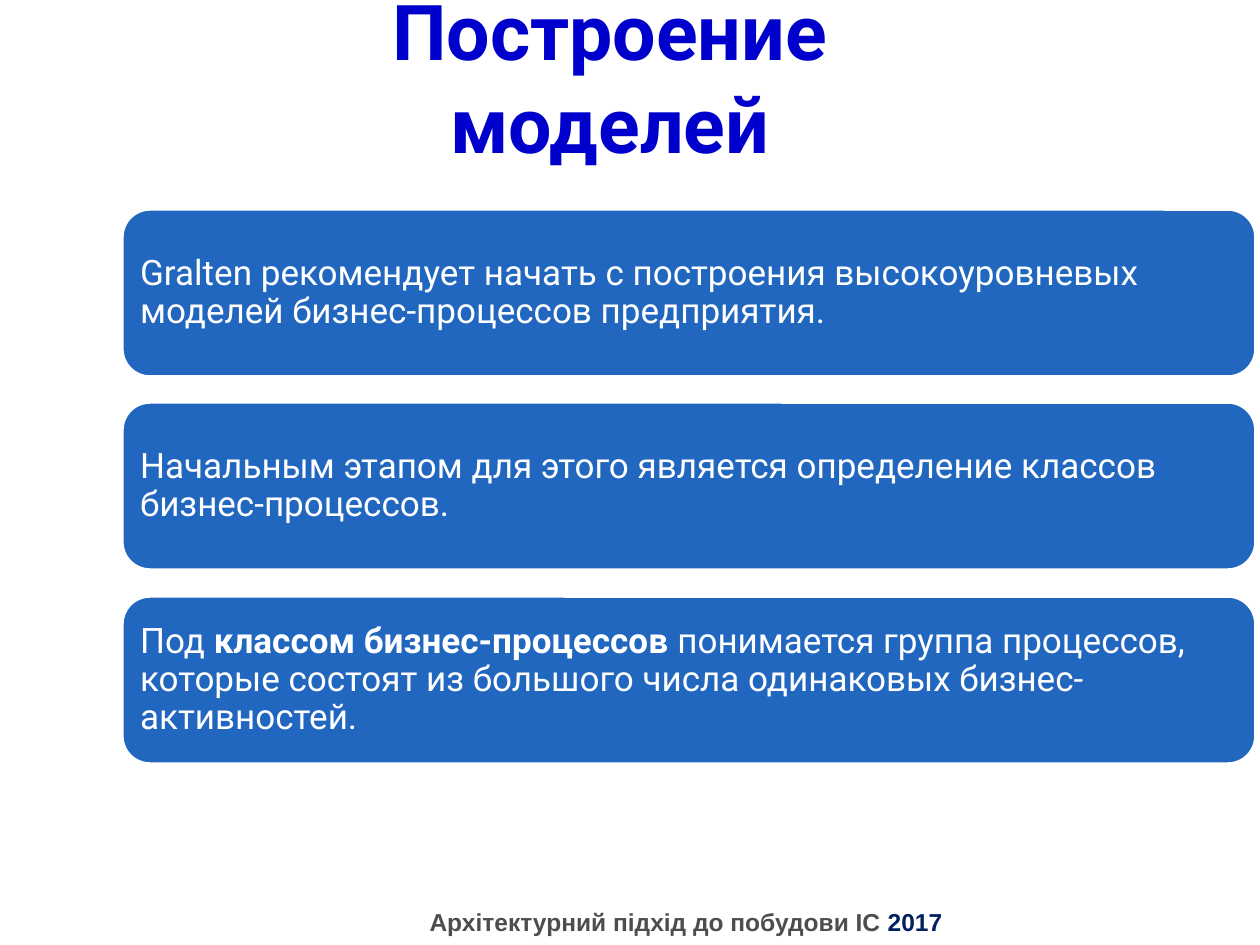
from pptx import Presentation
from pptx.dml.color import RGBColor
from pptx.enum.shapes import MSO_SHAPE
from pptx.enum.text import MSO_ANCHOR, PP_ALIGN
from pptx.util import Emu, Pt

TITLE = "Построение моделей"
# Each card is a list of (text, bold) runs.
CARDS = [
    [("Gralten рекомендует начать с построения высокоуровневых "
      "моделей бизнес-процессов предприятия.", False)],
    [("Начальным этапом для этого является определение классов "
      "бизнес-процессов.", False)],
    [("Под ", False),
     ("классом бизнес-процессов ", True),
     ("понимается группа процессов, которые состоят из большого числа "
      "одинаковых бизнес-активностей.", False)],
]
FOOTER = [("Архітектурний підхід до побудови ІС", "4D4D4D"), (" 2017", "002060")]

WHITE, BLUE, NAVY = "FFFFFF", "2167BF", "0000CC"
LEFT, TOP, WIDTH, HEIGHT = 122, 209, 1134, 168
LAST = 596  # top of the last card


def px(n):
    return Emu(n * 914400 // 126)


def rgb(code):
    return RGBColor.from_string(code)


def add_run(para, text, font, size, color, bold):
    run = para.add_run()
    run.text = text
    run.font.name = font
    run.font.size = Pt(size)
    run.font.bold = bold
    run.font.color.rgb = rgb(color)


def set_frame(shape, align, inset_x, inset_y):
    """Wrap and centre the text vertically; return the first paragraph."""
    frame = shape.text_frame
    frame.word_wrap = True
    frame.vertical_anchor = MSO_ANCHOR.MIDDLE
    frame.margin_left = frame.margin_right = px(inset_x)
    frame.margin_top = frame.margin_bottom = px(inset_y)
    para = frame.paragraphs[0]
    para.alignment = align
    return para


def add_label(slide, box, runs, font, size):
    """Add a centred bold text box from (text, color) runs."""
    label = slide.shapes.add_textbox(*map(px, box))
    para = set_frame(label, PP_ALIGN.CENTER, 13, 6)
    for text, color in runs:
        add_run(para, text, font, size, color, True)


def add_card(slide, top, runs):
    card = slide.shapes.add_shape(
        MSO_SHAPE.ROUNDED_RECTANGLE, px(LEFT), px(top), px(WIDTH), px(HEIGHT))
    card.shadow.inherit = False
    card.fill.solid()
    card.fill.fore_color.rgb = rgb(BLUE)
    card.line.color.rgb = rgb(WHITE)
    card.line.width = Pt(2)
    para = set_frame(card, PP_ALIGN.LEFT, 10, 10)
    para.line_spacing = 0.9
    for text, bold in runs:
        add_run(para, text, "Roboto", 20, WHITE, bold)


def main():
    deck = Presentation()
    deck.slide_width, deck.slide_height = px(1260), px(945)
    slide = deck.slides.add_slide(deck.slide_layouts[6])

    add_label(slide, (114, 900, 1144, 43), FOOTER, "Arial", 14)
    add_label(slide, (213, 4, 794, 144), [(TITLE, NAVY)], "Roboto", 44)
    for i, runs in enumerate(CARDS):
        add_card(slide, TOP + i * (LAST - TOP) // (len(CARDS) - 1), runs)

    deck.save("out.pptx")


if __name__ == "__main__":
    main()
